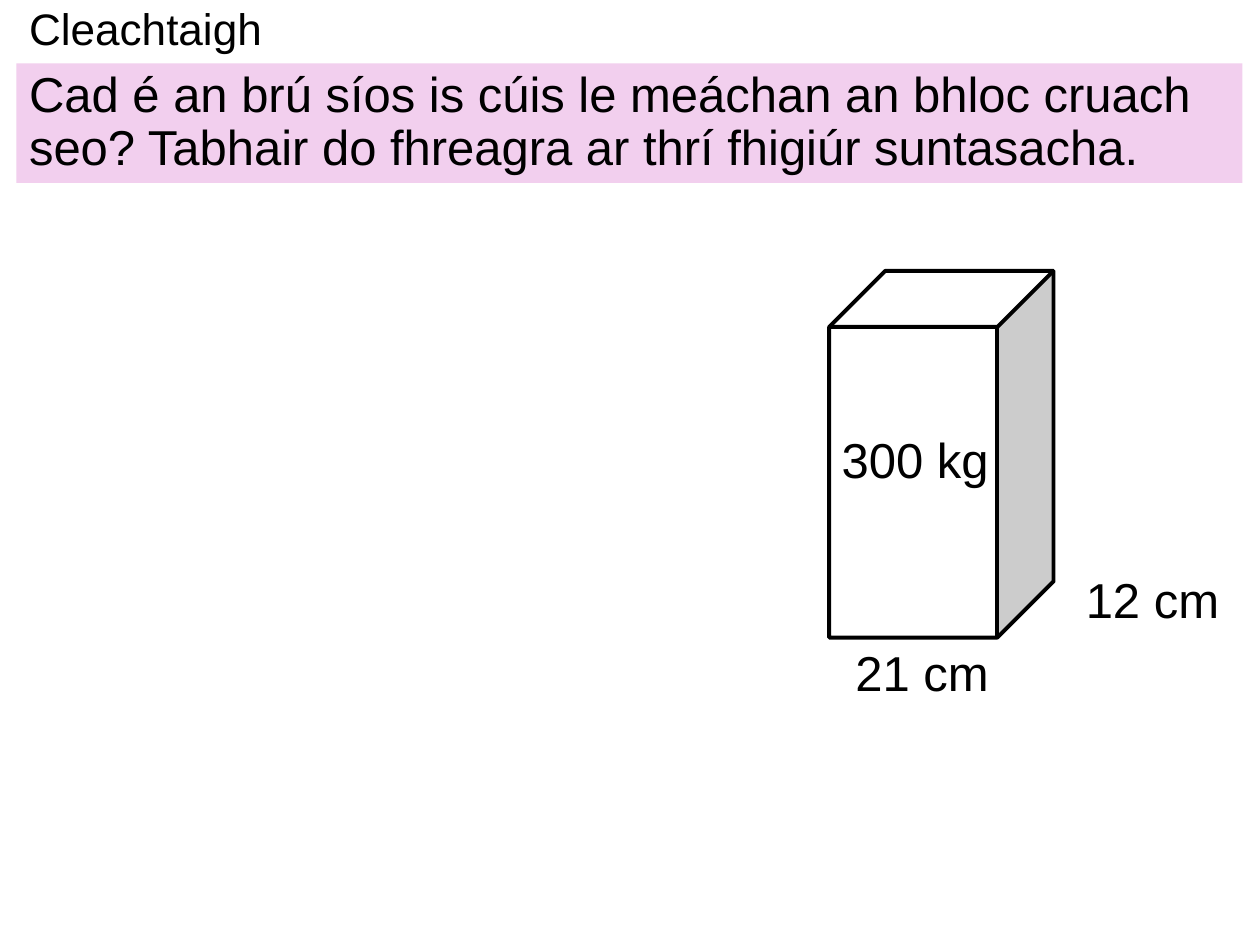
from lxml.etree import SubElement
from pptx import Presentation
from pptx.dml.color import RGBColor
from pptx.enum.shapes import MSO_SHAPE as Kind
from pptx.enum.text import MSO_ANCHOR as Anchor, MSO_AUTO_SIZE as Fit, PP_ALIGN as Align
from pptx.oxml.ns import qn
from pptx.util import Pt


def tint(code):
    return RGBColor.from_string(code)


class Page:
    """Holds the style and the current slide."""

    font, ink, pale, pink, size = "Arial", "000000", "FFFFFF", "F2CFEE", 28

    def __init__(self, deck):
        self.slide = deck.slides.add_slide(deck.slide_layouts[1])

    def place(self, item, left, top, width, height):
        item.left, item.top, item.width, item.height = map(Pt, (left, top, width, height))
        frame = item.text_frame
        frame.auto_size, frame.vertical_anchor = Fit.NONE, Anchor.MIDDLE
        return frame

    def paint(self, item, code):
        item.fill.solid()
        item.fill.fore_color.rgb = tint(code)

    def put(self, frame, text, size):
        frame.text = text
        line = frame.paragraphs[0]
        line.alignment = Align.LEFT
        for run in line.runs:
            run.font.name, run.font.size = self.font, Pt(size)
            run.font.color.rgb = tint(self.ink)
        return line

    def title(self, text, *box):
        frame = self.place(self.slide.shapes.title, *box)
        self.put(frame, text, 25.2).line_spacing = 0.9

    def body(self, text, *box):
        item = self.slide.placeholders[1]
        frame = self.place(item, *box)
        self.paint(item, self.pink)
        line = self.put(frame, text, self.size)
        props = line._p.get_or_add_pPr()
        props.set("marL", "0")
        props.set("indent", "0")
        SubElement(props, qn("a:buNone"))
        line.line_spacing, line.space_before = 0.9, Pt(0)

    def cube(self, *box):
        item = self.slide.shapes.add_shape(Kind.CUBE, *map(Pt, box))
        item.shadow.inherit = False
        self.paint(item, self.pale)
        item.line.color.rgb = tint(self.ink)
        item.line.width = Pt(2.25)

    def label(self, text, *box):
        frame = self.slide.shapes.add_textbox(*map(Pt, box)).text_frame
        frame.word_wrap, frame.auto_size = False, Fit.SHAPE_TO_FIT_TEXT
        self.put(frame, text, self.size).space_after = Pt(12)


def main():
    deck = Presentation()
    deck.slide_width, deck.slide_height = Pt(720), Pt(540)
    page = Page(deck)
    page.cube(473.8, 154.8, 128.2, 209.5)
    page.title("Cleachtaigh", 9.4, 0, 520.6, 36)
    page.body("Cad é an brú síos is cúis le meáchan an bhloc cruach seo? "
              "Tabhair do fhreagra ar thrí fhigiúr suntasacha.", 9.4, 36.2, 700.6, 68.4)
    page.label("300 kg", 473.8, 241.9, 99.4, 41)
    page.label("21 cm", 481.7, 363.6, 91.4, 41)
    page.label("12 cm", 613.4, 321.8, 91.4, 41)
    deck.save("out.pptx")


if __name__ == "__main__":
    main()
